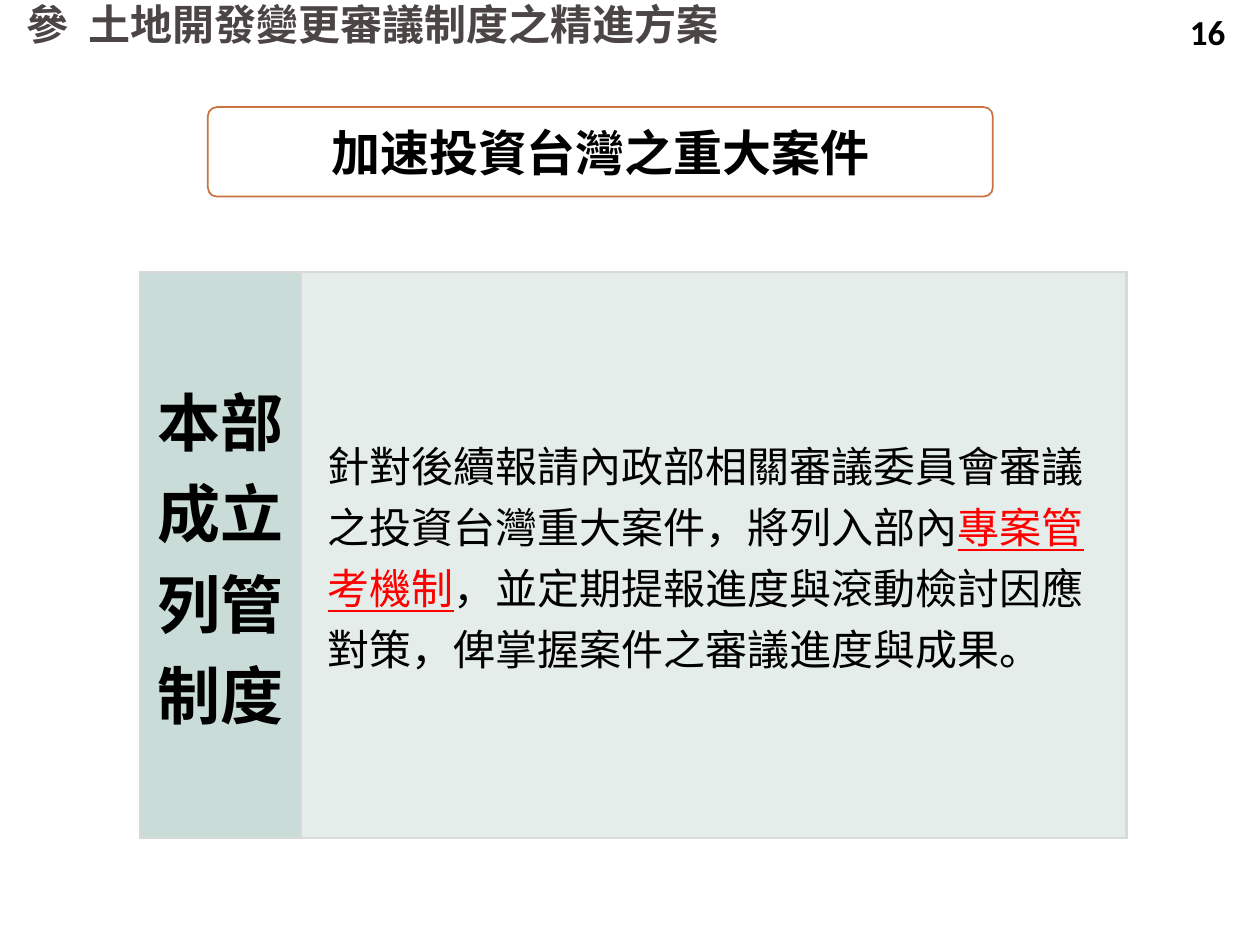
from lxml.etree import SubElement
from pptx import Presentation
from pptx.dml.color import RGBColor
from pptx.enum.shapes import MSO_SHAPE
from pptx.enum.text import MSO_ANCHOR, MSO_AUTO_SIZE, PP_ALIGN
from pptx.oxml.ns import qn
from pptx.util import Inches, Pt

CJK_FONT = "Noto Sans CJK SC"
HEADING = {"size": 24, "color": "4C4545", "bold": True}


def rgb(value):
    """Turn a hex string into a colour."""
    return RGBColor.from_string(value)


def add_span(para, text, size=24, color="000000", bold=False, underline=False, font=CJK_FONT):
    """Append a formatted span of text to a paragraph."""
    span = para.add_run()
    span.text = text
    span.font.size = Pt(size)
    span.font.bold = bold
    span.font.underline = underline
    span.font.color.rgb = rgb(color)
    span.font.name = font
    SubElement(span.font._element, qn("a:ea"), typeface=font)


def write_line(frame, text, align=PP_ALIGN.LEFT, spacing=1.0, **style):
    """Write one vertically centred line into a text frame."""
    frame.word_wrap = True
    frame.auto_size = MSO_AUTO_SIZE.NONE
    frame.vertical_anchor = MSO_ANCHOR.MIDDLE
    para = frame.paragraphs[0]
    para.alignment = align
    para.line_spacing = spacing
    add_span(para, text, **style)


def add_title(page, text, left, top, width, height):
    """Place and fill the title placeholder."""
    title = page.shapes.title
    title.left, title.top = Inches(left), Inches(top)
    title.width, title.height = Inches(width), Inches(height)
    write_line(title.text_frame, text, spacing=0.9, **HEADING)


def add_label(page, text, left, top, width, height, **style):
    """Add a text box with one line."""
    box = page.shapes.add_textbox(Inches(left), Inches(top), Inches(width), Inches(height))
    write_line(box.text_frame, text, **style)


def add_banner(page, text, left, top, width, height):
    """Add the outlined rounded banner."""
    banner = page.shapes.add_shape(
        MSO_SHAPE.ROUNDED_RECTANGLE, Inches(left), Inches(top), Inches(width), Inches(height))
    banner.adjustments[0] = 0.1
    banner.shadow.inherit = False
    banner.fill.solid()
    banner.fill.fore_color.rgb = rgb("FFFFFF")
    banner.line.color.rgb = rgb("C97440")
    banner.line.width = Pt(1)
    write_line(banner.text_frame, text, align=PP_ALIGN.CENTER, size=28, bold=True)


def format_cell(cell, fill):
    """Set the margins, borders and fill of a table cell."""
    cell.vertical_anchor = MSO_ANCHOR.MIDDLE
    cell.margin_left = cell.margin_top = cell.margin_right = Inches(0.01)
    cell.margin_bottom = 0
    properties = cell._tc.get_or_add_tcPr()
    for side in ("lnL", "lnR", "lnT", "lnB"):
        border = SubElement(properties, qn(f"a:{side}"), w=str(Pt(1.5)))
        SubElement(SubElement(border, qn("a:solidFill")), qn("a:srgbClr"), val="D9D9D9")
    cell.fill.solid()
    cell.fill.fore_color.rgb = rgb(fill)


def add_policy_table(page, heading, spans, left, top, widths, height):
    """Add a one-row table with a vertical heading and a description."""
    table = page.shapes.add_table(
        1, 2, Inches(left), Inches(top), Inches(sum(widths)), Inches(height)).table
    table.first_row = table.horz_banding = False
    for column, width in zip(table.columns, widths):
        column.width = Inches(width)
    heading_cell, detail_cell = table.rows[0].cells
    format_cell(heading_cell, "CADCD8")
    format_cell(detail_cell, "E5EDEB")

    heading_cell._tc.tcPr.set("vert", "eaVert")
    para = heading_cell.text_frame.paragraphs[0]
    para.alignment = PP_ALIGN.CENTER
    add_span(para, heading, size=36, bold=True)

    para = detail_cell.text_frame.paragraphs[0]
    para._p.get_or_add_pPr().set("marL", str(Inches(0.2)))
    for text, style in spans:
        add_span(para, text, **style)


def main():
    """Build and save the slide."""
    deck = Presentation()
    deck.slide_width, deck.slide_height = Inches(10), Inches(7.5)
    page = deck.slides.add_slide(deck.slide_layouts[5])
    add_title(page, "土地開發變更審議制度之精進方案", 0.6, -0.01, 8.34, 0.45)
    add_label(page, "參", 0.11, -0.01, 0.49, 0.45, spacing=0.9, **HEADING)
    add_policy_table(page, "本部成立列管制度", [
        ("針對後續報請內政部相關審議委員會審議之投資台灣重大案件，將列入部內", {}),
        ("專案管考機制", {"color": "FF0000", "underline": True}),
        ("，並定期提報進度與滾動檢討因應對策，俾掌握案件之審議進度與成果。", {}),
    ], 1.11, 2.16, (1.28, 6.55), 4.49)
    add_label(page, "16", 9.2, 0.08, 0.77, 0.34,
              align=PP_ALIGN.CENTER, size=20, bold=True, font="Calibri")
    add_banner(page, "加速投資台灣之重大案件", 1.65, 0.85, 6.23, 0.71)
    deck.save("out.pptx")


if __name__ == "__main__":
    main()
